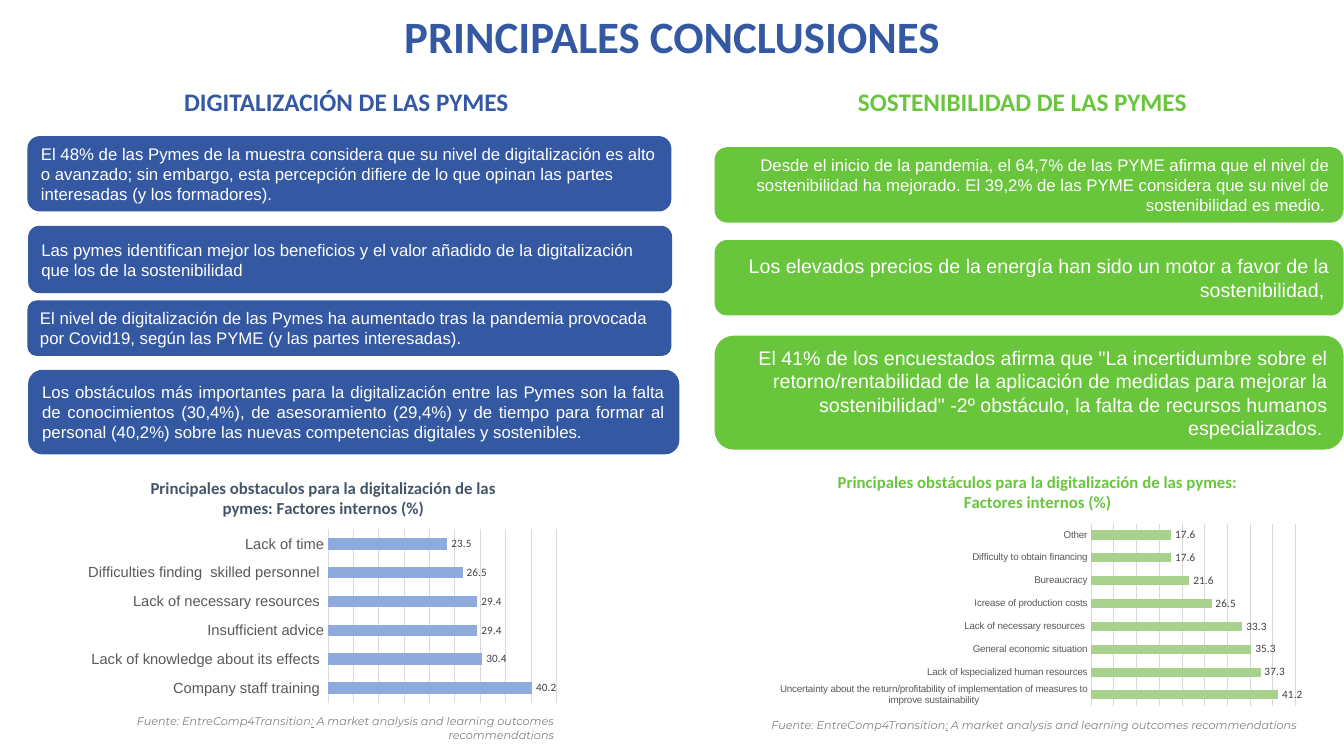
from lxml import etree
from pptx import Presentation
from pptx import util as u
from pptx.chart import data as chart_data
from pptx.dml import color as dml
from pptx.enum import chart as chart_enum
from pptx.enum import shapes, text
from pptx.oxml import ns

COLORS = {
    "blue": "3459A2", "green": "69C53C", "white": "FFFFFF", "slate": "44546A",
    "light blue": "8FAADC", "light green": "A9D18E", "grid": "D9D9D9",
    "axis": "595959", "label": "404040", "source": "808080",
}
LEFT, RIGHT = text.PP_ALIGN.LEFT, text.PP_ALIGN.RIGHT
CENTER, JUSTIFY = text.PP_ALIGN.CENTER, text.PP_ALIGN.JUSTIFY

DIGITAL = {
    "heading": ("DIGITALIZACIÓN DE LAS PYMES", (3.7, 0, 8.84, 1.02), LEFT),
    "color": "blue",
    "cards": [
        ("El 48% de las Pymes de la muestra considera que su nivel de digitalización es alto o avanzado; "
         "sin embargo, esta percepción difiere de lo que opinan las partes interesadas (y los formadores).",
         (0, 1.37, 16.23, 1.9), 12, LEFT),
        ("Las pymes identifican mejor los beneficios y el valor añadido de la digitalización que los de la "
         "sostenibilidad", (0.02, 3.63, 16.23, 1.7), 12, LEFT),
        ("El nivel de digitalización de las Pymes ha aumentado tras la pandemia provocada por Covid19, "
         "según las PYME (y las partes interesadas).", (0, 5.51, 16.23, 1.4), 12, LEFT),
        ("Los obstáculos más importantes para la digitalización entre las Pymes son la falta de "
         "conocimientos (30,4%), de asesoramiento (29,4%) y de tiempo para formar al personal (40,2%) "
         "sobre las nuevas competencias digitales y sostenibles.", (0.02, 7.26, 16.41, 2.13), 12, JUSTIFY),
    ],
    "chart": {
        "box": (1.34, 9.62, 12.24, 6.15),
        "title": "Principales obstaculos para la digitalización de las pymes: Factores internos (%)",
        "title_color": "slate", "bar_color": "light blue", "axis_size": 10.5,
        "plot": (0.51, 0.27, 0.47, 0.71),
        "bars": [
            ("Company staff training ", 40.2), ("Lack of knowledge about its effects ", 30.4),
            ("Insufficient advice", 29.4), ("Lack of necessary resources ", 29.4),
            ("Difficulties finding  skilled personnel ", 26.5), ("Lack of time", 23.5),
        ],
    },
    "source": (0.35, 15.82, 13.18, 0.94),
}
SUSTAINABLE = {
    "heading": ("SOSTENIBILIDAD DE LAS PYMES", (2, 0, 11.51, 1.02), CENTER),
    "color": "green",
    "cards": [
        ("Desde el inicio de la pandemia, el 64,7% de las PYME afirma que el nivel de sostenibilidad ha "
         "mejorado. El 39,2% de las PYME considera que su nivel de sostenibilidad es medio. ",
         (0, 1.65, 15.85, 1.9), 12, RIGHT),
        ("Los elevados precios de la energía han sido un motor a favor de la sostenibilidad, ",
         (0, 3.99, 15.85, 1.9), 14, RIGHT),
        ("El 41% de los encuestados afirma que \"La incertidumbre sobre el retorno/rentabilidad de la "
         "aplicación de medidas para mejorar la sostenibilidad\" -2º obstáculo, la falta de recursos "
         "humanos especializados. ", (0, 6.4, 15.85, 2.87), 14, RIGHT),
    ],
    "chart": {
        "box": (1.37, 9.47, 13.54, 6.4),
        "title": "Principales obstáculos para la digitalización de las pymes: Factores internos (%)",
        "title_color": "green", "bar_color": "light green", "axis_size": 7,
        "plot": (0.6, 0.26, 0.38, 0.72),
        "bars": [
            ("Uncertainty about the return/profitability of implementation of measures to improve "
             "sustainability", 41.2),
            ("Lack of kspecialized human resources", 37.3), ("General economic situation", 35.3),
            ("Lack of necessary resources ", 33.3), ("Icrease of production costs", 26.5),
            ("Bureaucracy", 21.6), ("Difficulty to obtain financing", 17.6), ("Other", 17.6),
        ],
    },
    "source": (0.33, 15.92, 14.61, 0.61),
}


def rgb(name):
    """Return the named colour."""
    return dml.RGBColor.from_string(COLORS[name])


def place(origin, box):
    """Return a box's lengths, moved to the origin of its region."""
    left, top, width, height = box
    return u.Cm(origin[0] + left), u.Cm(origin[1] + top), u.Cm(width), u.Cm(height)


def style(font, size, color, name="Calibri", bold=False, italic=False, underline=False):
    """Format a font."""
    font.name, font.size, font.color.rgb = name, u.Pt(size), rgb(color)
    font.bold, font.italic, font.underline = bold, italic, underline


def write(paragraph, words, align=LEFT, **font_format):
    """Add a formatted run to a paragraph."""
    paragraph.alignment = align
    run = paragraph.add_run()
    run.text = words
    style(run.font, **font_format)


def add_text_box(slide, position):
    """Add a wrapping text box and return its first paragraph."""
    frame = slide.shapes.add_textbox(*position).text_frame
    frame.word_wrap = True
    return frame.paragraphs[0]


def add_card(slide, position, words, size, align, color):
    """Add a rounded card holding one conclusion."""
    card = slide.shapes.add_shape(shapes.MSO_SHAPE.ROUNDED_RECTANGLE, *position)
    card.shadow.inherit = False
    card.fill.solid()
    card.fill.fore_color.rgb = rgb(color)
    card.line.fill.background()
    card.text_frame.word_wrap = True
    card.text_frame.vertical_anchor = text.MSO_ANCHOR.MIDDLE
    write(card.text_frame.paragraphs[0], words, align, size=size, color="white", name="Arial")


def set_plot_layout(chart, fractions):
    """Fix the inner plot area as fractions of the chart."""
    plot_area = chart._chartSpace.find(".//" + ns.qn("c:plotArea"))
    for old_layout in plot_area.findall(ns.qn("c:layout")):
        plot_area.remove(old_layout)
    layout = etree.Element(ns.qn("c:layout"))
    plot_area.insert(0, layout)
    manual = etree.SubElement(layout, ns.qn("c:manualLayout"))
    settings = [("layoutTarget", "inner"), ("xMode", "edge"), ("yMode", "edge")]
    settings += zip("xywh", fractions)
    for tag, value in settings:
        etree.SubElement(manual, ns.qn("c:" + tag)).set("val", str(value))


def add_obstacle_chart(slide, position, details):
    """Add a bar chart of obstacles."""
    values = chart_data.CategoryChartData()
    values.categories = [name for name, _ in details["bars"]]
    values.add_series("Series 1", [value for _, value in details["bars"]])
    chart = slide.shapes.add_chart(chart_enum.XL_CHART_TYPE.BAR_CLUSTERED, *position, values).chart
    chart.has_legend = False
    chart.font.name, chart.font.size = "Calibri", u.Pt(10)
    write(chart.chart_title.text_frame.paragraphs[0], details["title"], CENTER,
          size=12, color=details["title_color"], bold=True)
    chart.chart_title.include_text_in_layout = False
    set_plot_layout(chart, details["plot"])

    names, scale = chart.category_axis, chart.value_axis
    names.major_tick_mark = chart_enum.XL_TICK_MARK.NONE
    style(names.tick_labels.font, details["axis_size"], "axis", "Arial")
    scale.minimum_scale, scale.maximum_scale, scale.major_unit = 0, 45, 5
    scale.has_major_gridlines = True
    scale.visible = False
    for line in (names.format.line, scale.major_gridlines.format.line):
        line.color.rgb, line.width = rgb("grid"), u.Pt(0.75)

    plot = chart.plots[0]
    plot.gap_width, plot.overlap, plot.vary_by_categories = 150, -25, False
    bars = plot.series[0]
    bars.invert_if_negative = False
    bars.format.fill.solid()
    bars.format.fill.fore_color.rgb = rgb(details["bar_color"])
    labels = bars.data_labels
    labels.show_value = True
    labels.position = chart_enum.XL_LABEL_POSITION.OUTSIDE_END
    style(labels.font, 8, "label")


def add_column(slide, origin, column):
    """Place a heading, its cards, chart and source from the column's origin."""
    heading, box, align = column["heading"]
    write(add_text_box(slide, place(origin, box)), heading, align,
          size=18, color=column["color"], bold=True)
    for words, card_box, size, card_align in column["cards"]:
        add_card(slide, place(origin, card_box), words, size, card_align, column["color"])
    add_obstacle_chart(slide, place(origin, column["chart"]["box"]), column["chart"])
    source = add_text_box(slide, place(origin, column["source"]))
    for words in ("Fuente: EntreComp4Transition", ":", " A market analysis and learning outcomes recommendations"):
        write(source, words, RIGHT, size=8, color="source", name="Montserrat",
              italic=True, underline=words == ":")


def add_title(slide, position):
    """Move and format the slide title."""
    title = slide.shapes.title
    title.left, title.top, title.width, title.height = position
    title.text_frame.vertical_anchor = text.MSO_ANCHOR.TOP
    write(title.text_frame.paragraphs[0], "PRINCIPALES CONCLUSIONES", CENTER,
          size=32, color="blue", bold=True)


def main():
    """Build and save the presentation."""
    presentation = Presentation()
    presentation.slide_width, presentation.slide_height = u.Cm(33.87), u.Cm(19.05)
    slide = presentation.slides.add_slide(presentation.slide_layouts[5])
    add_title(slide, place((0, 0), (6.12, 0.1, 21.64, 1.63)))
    add_column(slide, (0.69, 2.06), DIGITAL)
    add_column(slide, (18.01, 2.06), SUSTAINABLE)
    presentation.save("out.pptx")


if __name__ == "__main__":
    main()
